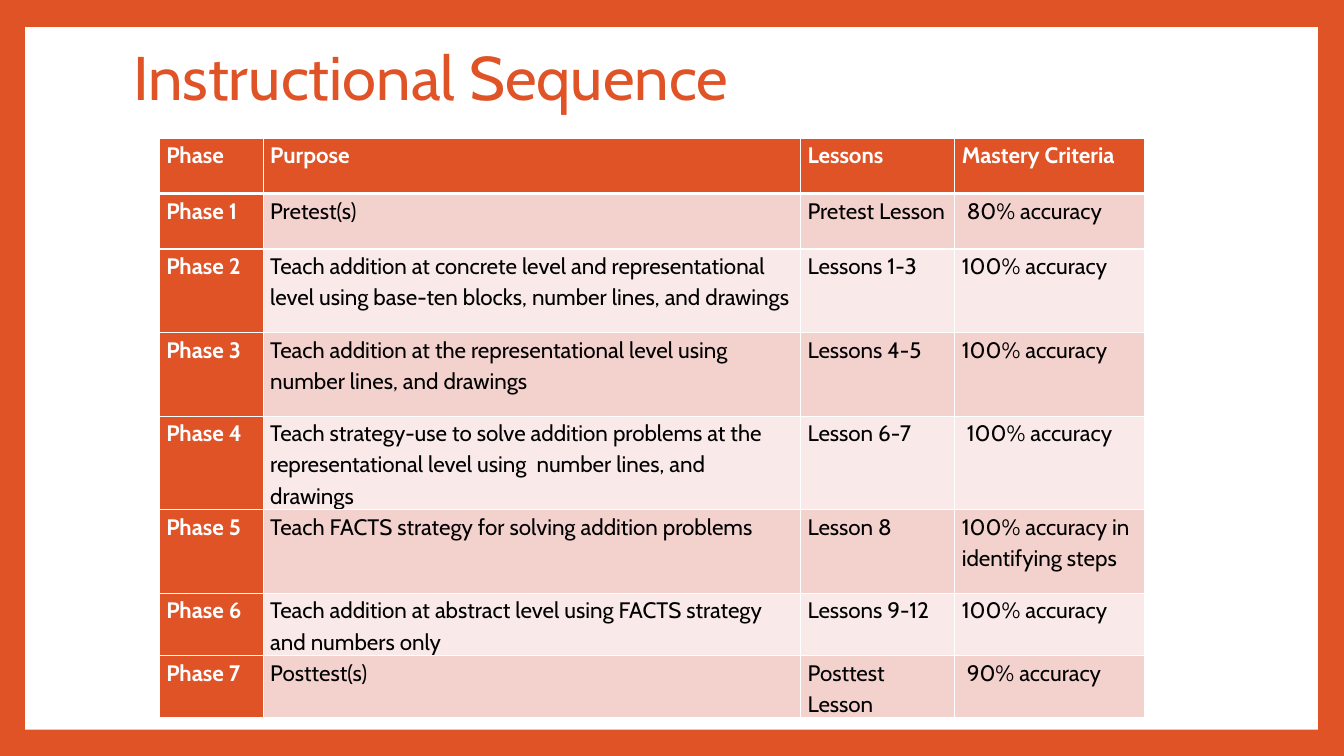
from dataclasses import dataclass

from lxml.etree import SubElement
from pptx import Presentation
from pptx.dml.color import RGBColor
from pptx.enum.shapes import MSO_SHAPE
from pptx.enum.text import MSO_ANCHOR, PP_ALIGN
from pptx.oxml.ns import qn
from pptx.util import Inches, Pt


@dataclass(frozen=True)
class Theme:
    font: str = "Cabin"
    accent: str = "DF5327"
    white: str = "FFFFFF"
    ink: str = "000000"
    band_dark: str = "F3D1CD"
    band_light: str = "F9E9E8"
    title_size: int = 44
    table_size: int = 16
    thin_line: int = 1
    header_line: int = 3


HEADER = ("Phase", "Purpose", "Lessons", "Mastery Criteria")
PHASES = [
    ("Pretest(s)", "Pretest Lesson", " 80% accuracy"),
    ("Teach addition at concrete level and representational level using "
     "base-ten blocks, number lines, and drawings", "Lessons 1-3", "100% accuracy"),
    ("Teach addition at the representational level using  number lines, "
     "and drawings", "Lessons 4-5", "100% accuracy"),
    ("Teach strategy-use to solve addition problems at the representational "
     "level using  number lines, and drawings", "Lesson 6-7", " 100% accuracy"),
    ("Teach FACTS strategy for solving addition problems", "Lesson 8",
     "100% accuracy in identifying steps"),
    ("Teach addition at abstract level using FACTS strategy and numbers only",
     "Lessons 9-12", "100% accuracy"),
    ("Posttest(s)", "Posttest Lesson", " 90% accuracy"),
]
COLUMN_WIDTHS = (1.03, 5.33, 1.53, 1.88)
ROW_HEIGHTS = (0.55, 0.55, 0.83, 0.83, 0.83, 0.83, 0.55, 0.55)


class SlideBuilder:
    def __init__(self, presentation, theme):
        self.theme = theme
        self.slide = presentation.slides.add_slide(presentation.slide_layouts[5])

    def background(self, color):
        fill = self.slide.background.fill
        fill.solid()
        fill.fore_color.rgb = RGBColor.from_string(color)

    def add_text(self, text_frame, text, size, color, bold=False, spacing=1.0):
        paragraph = text_frame.paragraphs[0]
        paragraph.alignment = PP_ALIGN.LEFT
        paragraph.line_spacing = spacing
        run = paragraph.add_run()
        run.text = text
        run.font.name = self.theme.font
        run.font.size = Pt(size)
        run.font.bold = bold
        run.font.color.rgb = RGBColor.from_string(color)

    def title(self, text, left, top, width, height):
        title = self.slide.shapes.title
        title.left, title.top = Inches(left), Inches(top)
        title.width, title.height = Inches(width), Inches(height)
        title.text_frame.word_wrap = True
        title.text_frame.vertical_anchor = MSO_ANCHOR.MIDDLE
        self.add_text(title.text_frame, text, self.theme.title_size,
                      self.theme.accent, spacing=0.9)

    def panel(self, left, top, width, height):
        panel = self.slide.shapes.add_shape(
            MSO_SHAPE.RECTANGLE, Inches(left), Inches(top), Inches(width), Inches(height))
        panel.shadow.inherit = False
        panel.fill.solid()
        panel.fill.fore_color.rgb = RGBColor.from_string(self.theme.white)
        panel.line.fill.background()
        # The panel lies behind the title
        self.slide.shapes.title.element.addprevious(panel.element)

    def borders(self, cell, top, bottom):
        properties = cell._tc.get_or_add_tcPr()
        thin = self.theme.thin_line
        for side, width in (("L", thin), ("R", thin), ("T", top), ("B", bottom)):
            line = SubElement(properties, qn(f"a:ln{side}"), w=str(Pt(width)))
            fill = SubElement(line, qn("a:solidFill"))
            SubElement(fill, qn("a:srgbClr"), val=self.theme.white)

    def cell(self, cell, text, row, column):
        theme = self.theme
        heading = row == 0 or column == 0
        band = theme.band_dark if row % 2 else theme.band_light
        cell.margin_left = cell.margin_right = Inches(0.07)
        cell.margin_top = cell.margin_bottom = 0
        self.borders(cell,
                     theme.header_line if row == 1 else theme.thin_line,
                     theme.header_line if row == 0 else theme.thin_line)
        cell.fill.solid()
        cell.fill.fore_color.rgb = RGBColor.from_string(theme.accent if heading else band)
        self.add_text(cell.text_frame, text, theme.table_size,
                      theme.white if heading else theme.ink, heading, 1.15)

    def table(self, rows, left, top, widths, heights):
        table = self.slide.shapes.add_table(
            len(rows), len(widths), Inches(left), Inches(top),
            Inches(sum(widths)), Inches(sum(heights))).table
        for column, width in zip(table.columns, widths):
            column.width = Inches(width)
        for row, height in zip(table.rows, heights):
            row.height = Inches(height)
        for row, texts in enumerate(rows):
            for column, text in enumerate(texts):
                self.cell(table.cell(row, column), text, row, column)


def main():
    presentation = Presentation()
    presentation.slide_width, presentation.slide_height = Inches(13.33), Inches(7.5)
    theme = Theme()
    builder = SlideBuilder(presentation, theme)

    # Frame and title
    builder.background(theme.accent)
    builder.panel(0.25, 0.27, 12.82, 6.97)
    builder.title("Instructional Sequence", 1.22, 0.36, 10.8, 0.87)

    # Table of phases
    rows = [HEADER]
    rows += [(f"Phase {number}", *phase) for number, phase in enumerate(PHASES, 1)]
    builder.table(rows, 1.58, 1.37, COLUMN_WIDTHS, ROW_HEIGHTS)

    presentation.save("out.pptx")


if __name__ == "__main__":
    main()
